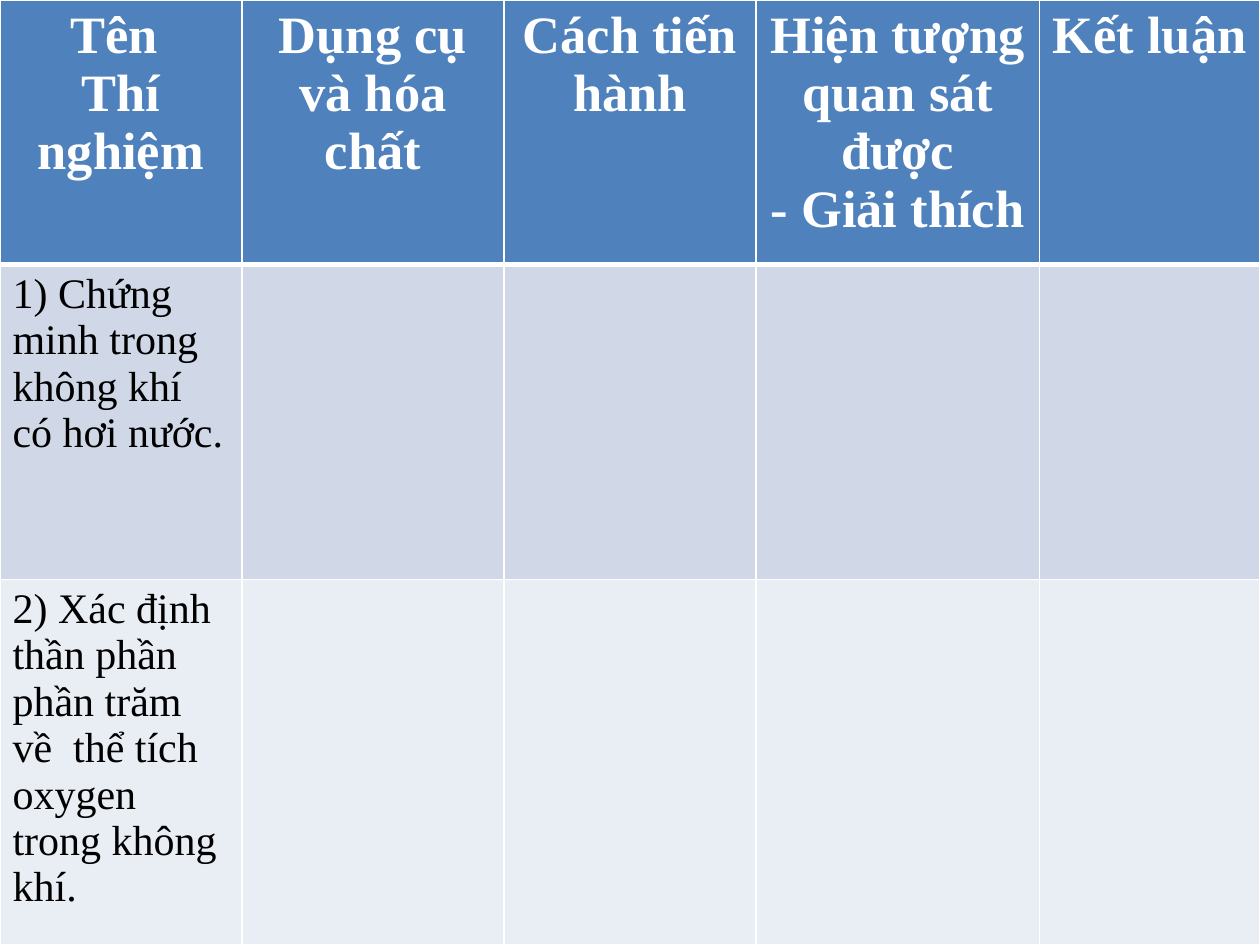
from dataclasses import dataclass

import lxml.etree
import pptx
import pptx.dml.color
import pptx.enum.text
import pptx.oxml.ns
import pptx.util
from pptx.util import Cm


@dataclass(frozen=True)
class Theme:
    font: str = "Times New Roman"
    header_size: int = 30
    body_size: int = 24
    header_text: str = "FFFFFF"
    body_text: str = "000000"
    header_fill: str = "4F81BD"
    band_fills: tuple = ("D0D8E8", "E9EDF4")
    border: str = "FFFFFF"
    thin_border: int = 1
    thick_border: int = 3


THEME = Theme()

HEADINGS = [
    "Tên \nThí nghiệm",
    "Dụng cụ và hóa chất",
    "Cách tiến hành",
    "Hiện tượng quan sát được\n- Giải thích",
    "Kết luận",
]
EXPERIMENTS = [
    "1) Chứng minh trong không khí có hơi nước.",
    "2) Xác định thần phần phần trăm về  thể tích oxygen trong không khí.",
]
COLUMN_SHARES = [1.92, 2.08, 2, 2.25, 1.75]
ROW_SHARES = [2.1, 2.5, 2.9]


def set_borders(cell, top, bottom):
    properties = cell._tc.get_or_add_tcPr()
    widths = {"lnL": THEME.thin_border, "lnR": THEME.thin_border, "lnT": top, "lnB": bottom}
    for position, (side, width) in enumerate(widths.items()):
        line = lxml.etree.Element(pptx.oxml.ns.qn(f"a:{side}"), w=str(pptx.util.Pt(width)))
        fill = lxml.etree.SubElement(line, pptx.oxml.ns.qn("a:solidFill"))
        lxml.etree.SubElement(fill, pptx.oxml.ns.qn("a:srgbClr"), val=THEME.border)
        properties.insert(position, line)


def format_cell(cell, wording, is_header, fill):
    cell.fill.solid()
    cell.fill.fore_color.rgb = pptx.dml.color.RGBColor.from_string(fill)
    cell.text_frame.text = wording
    color = THEME.header_text if is_header else THEME.body_text
    for paragraph in cell.text_frame.paragraphs:
        if is_header:
            paragraph.alignment = pptx.enum.text.PP_ALIGN.CENTER
        for run in paragraph.runs:
            run.font.name = THEME.font
            run.font.size = pptx.util.Pt(THEME.header_size if is_header else THEME.body_size)
            run.font.bold = is_header
            run.font.color.rgb = pptx.dml.color.RGBColor.from_string(color)


def add_experiment_table(slide, left, top, width, height):
    rows = [HEADINGS] + [[name] + [""] * (len(HEADINGS) - 1) for name in EXPERIMENTS]
    experiments = slide.shapes.add_table(len(rows), len(HEADINGS), left, top, width, height).table
    for column, share in zip(experiments.columns, COLUMN_SHARES):
        column.width = int(width * share / sum(COLUMN_SHARES))
    for row, share in zip(experiments.rows, ROW_SHARES):
        row.height = int(height * share / sum(ROW_SHARES))

    fills = [THEME.header_fill, *THEME.band_fills]
    for row_index, (wordings, fill) in enumerate(zip(rows, fills)):
        is_header = row_index == 0
        top_border = THEME.thick_border if row_index == 1 else THEME.thin_border
        bottom_border = THEME.thick_border if is_header else THEME.thin_border
        for column_index, wording in enumerate(wordings):
            cell = experiments.cell(row_index, column_index)
            format_cell(cell, wording, is_header, fill)
            set_borders(cell, top_border, bottom_border)


def main():
    presentation = pptx.Presentation()
    presentation.slide_width = Cm(25.4)
    presentation.slide_height = Cm(19.05)
    slide = presentation.slides.add_slide(presentation.slide_layouts[6])
    add_experiment_table(slide, Cm(0), Cm(0), presentation.slide_width, presentation.slide_height)
    presentation.save("out.pptx")


if __name__ == "__main__":
    main()
